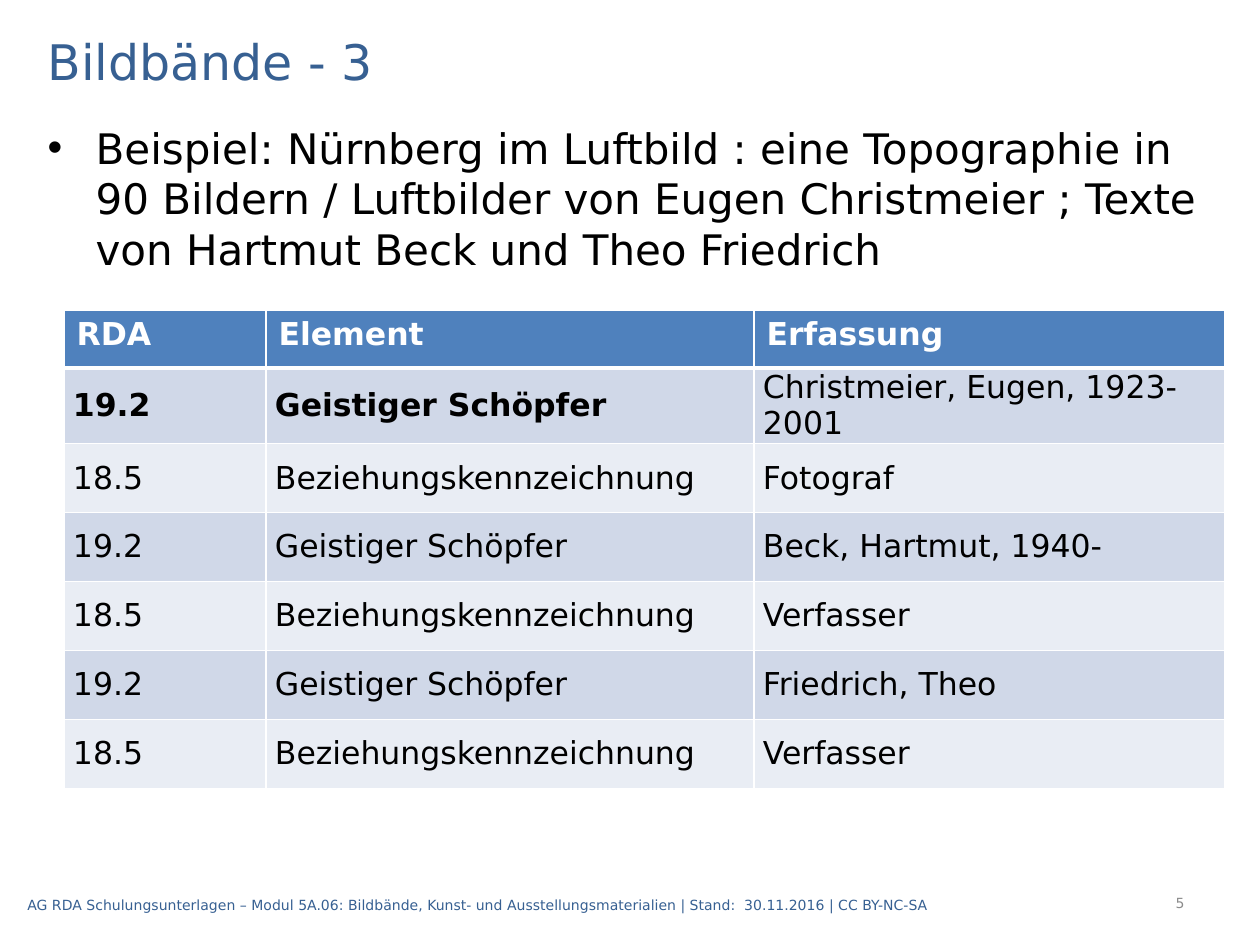
from lxml import etree
from pptx import Presentation
from pptx.dml.color import RGBColor
from pptx.enum.text import MSO_ANCHOR, MSO_AUTO_SIZE, PP_ALIGN
from pptx.oxml.ns import qn
from pptx.util import Pt

PX = 914400 / 126
FONT = "DejaVu Sans"
MIDDLE, TOP = MSO_ANCHOR.MIDDLE, MSO_ANCHOR.TOP
LEFT, RIGHT = PP_ALIGN.LEFT, PP_ALIGN.RIGHT
NO_FIT = MSO_AUTO_SIZE.NONE

NAVY = RGBColor(0x37, 0x60, 0x92)
BLACK = RGBColor(0x00, 0x00, 0x00)
WHITE = RGBColor(0xFF, 0xFF, 0xFF)
GREY = RGBColor(0x8C, 0x8C, 0x8C)
HEADER_BLUE = RGBColor(0x4F, 0x81, 0xBD)
BAND_DARK = RGBColor(0xD0, 0xD8, 0xE8)
BAND_LIGHT = RGBColor(0xE9, 0xED, 0xF4)

COLUMN_WIDTHS = [202, 488, 471]
ROW_HEIGHTS = [58, 72] + [69] * 5
CREATOR, RELATION = "Geistiger Schöpfer", "Beziehungskennzeichnung"
ROWS = [
    ("RDA", "Element", "Erfassung"),
    ("19.2", CREATOR, "Christmeier, Eugen, 1923-2001"),
    ("18.5", RELATION, "Fotograf"),
    ("19.2", CREATOR, "Beck, Hartmut, 1940-"),
    ("18.5", RELATION, "Verfasser"),
    ("19.2", CREATOR, "Friedrich, Theo"),
    ("18.5", RELATION, "Verfasser"),
]


def px(length):
    return round(length * PX)


def place(shape, box):
    shape.left, shape.top, shape.width, shape.height = map(px, box)


def write(frame, text, size, color, bold=False, align=LEFT):
    para = frame.paragraphs[0]
    para.alignment = align
    span = para.add_run()
    span.text = text
    span.font.name = FONT
    span.font.size = Pt(size)
    span.font.bold = bold
    span.font.color.rgb = color
    return para


def fill_placeholder(shape, box, text, size, color, anchor):
    place(shape, box)
    frame = shape.text_frame
    frame.word_wrap = True
    frame.auto_size = NO_FIT
    frame.vertical_anchor = anchor
    return write(frame, text, size, color)


def add_title(page, box):
    fill_placeholder(page.shapes.title, box, "Bildbände - 3", 28, NAVY, MIDDLE)


def add_example(page, box):
    text = ("Beispiel: Nürnberg im Luftbild : eine Topographie in 90 Bildern / "
            "Luftbilder von Eugen Christmeier ; Texte von Hartmut Beck und Theo Friedrich")
    para = fill_placeholder(page.placeholders[1], box, text, 24, BLACK, TOP)
    properties = para._p.get_or_add_pPr()
    properties.set("marL", str(px(48)))
    properties.set("indent", str(px(-48)))
    bullet = etree.SubElement(properties, qn("a:buChar"))
    bullet.set("char", "•")


def add_note(page, box, text, color, align=LEFT):
    shape = page.shapes.add_textbox(*map(px, box))
    frame = shape.text_frame
    frame.word_wrap = True
    frame.vertical_anchor = MIDDLE
    write(frame, text, 8, color, align=align)


def add_borders(cell, bottom_width):
    properties = cell._tc.get_or_add_tcPr()
    for side, width in (("L", 1), ("R", 1), ("T", 1), ("B", bottom_width)):
        line = etree.SubElement(properties, qn(f"a:ln{side}"), w=str(Pt(width)))
        fill = etree.SubElement(line, qn("a:solidFill"))
        etree.SubElement(fill, qn("a:srgbClr"), val=str(WHITE))


def style_cell(cell, text, row, column):
    header = row == 0
    add_borders(cell, 3 if header else 1)
    cell.fill.solid()
    if header:
        cell.fill.fore_color.rgb = HEADER_BLUE
        write(cell.text_frame, text, 18, WHITE, bold=True)
        return
    cell.fill.fore_color.rgb = BAND_DARK if row % 2 else BAND_LIGHT
    cell.vertical_anchor = MIDDLE
    cell.margin_left = cell.margin_right = px(9)
    cell.margin_top = cell.margin_bottom = 0
    para = write(cell.text_frame, text, 18, BLACK, bold=row == 1 and column < 2)
    para.space_after = Pt(6)


def add_rda_table(page, left, top):
    box = (left, top, sum(COLUMN_WIDTHS), sum(ROW_HEIGHTS))
    table = page.shapes.add_table(len(ROWS), len(COLUMN_WIDTHS), *map(px, box)).table
    for column, width in zip(table.columns, COLUMN_WIDTHS):
        column.width = px(width)
    for row, height in zip(table.rows, ROW_HEIGHTS):
        row.height = px(height)
    for row, texts in enumerate(ROWS):
        for column, text in enumerate(texts):
            style_cell(table.cell(row, column), text, row, column)


def main():
    deck = Presentation()
    deck.slide_width, deck.slide_height = px(1260), px(945)
    page = deck.slides.add_slide(deck.slide_layouts[1])
    add_title(page, (35, 25, 1191, 71))
    add_example(page, (35, 116, 1191, 753))
    add_note(page, (997, 878, 200, 50), "5", GREY, RIGHT)
    add_note(page, (15, 880, 1160, 50),
             "AG RDA Schulungsunterlagen – Modul 5A.06: Bildbände, Kunst- und "
             "Ausstellungsmaterialien | Stand:  30.11.2016 | CC BY-NC-SA", NAVY)
    add_rda_table(page, 64, 310)
    deck.save("out.pptx")


if __name__ == "__main__":
    main()
